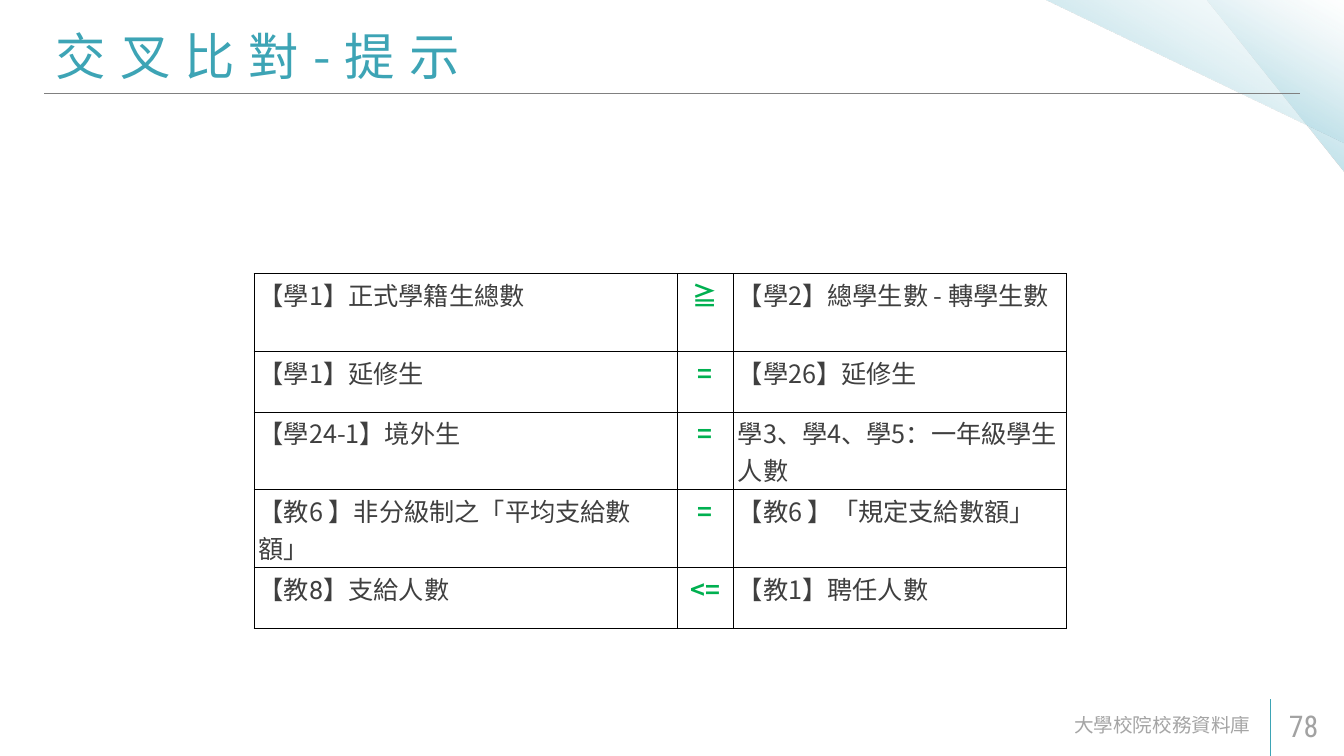
import pptx
import pptx.util
import pptx.dml.color
import pptx.oxml
import pptx.oxml.ns
import pptx.enum.shapes
import pptx.enum.text
from lxml import etree

PX = 9144  # 100 px to the inch
NS = 'xmlns:a="http://schemas.openxmlformats.org/drawingml/2006/main"'
SANS = "Noto Sans CJK SC"
TEAL, INK, GREEN = "3DA4B5", "3F3F3F", "00B050"
ALIGN = pptx.enum.text.PP_ALIGN


def rgb(code):
    return pptx.dml.color.RGBColor.from_string(code)


def write(frame, text, font, size, color, align=ALIGN.LEFT, bold=False, east=None):
    """Add one styled run to the first paragraph and return it."""
    frame.word_wrap = True
    para = frame.paragraphs[0]
    para.alignment = align
    run = para.add_run()
    run.text = text
    run.font.name = font
    run.font.size = pptx.util.Pt(size)
    run.font.bold = bold
    run.font.color.rgb = rgb(color)
    face = etree.SubElement(run.font._element, pptx.oxml.ns.qn("a:ea"))
    face.set("typeface", east or font)
    return run


deck = pptx.Presentation()
deck.slide_width, deck.slide_height = 2000 * PX, 1125 * PX
slide = deck.slides.add_slide(deck.slide_layouts[6])
shapes = slide.shapes

# Corner triangles
stops = [(0, "97D1E0", 100), (50, "AAD7E2", 44), (100, "E0F0F4", 0)]
marks = "".join(
    f'<a:gs pos="{pos * 1000}"><a:srgbClr val="{code}">'
    f'<a:alpha val="{alpha * 1000}"/></a:srgbClr></a:gs>'
    for pos, code, alpha in stops
)
fade = (f'<a:gradFill {NS} rotWithShape="1"><a:gsLst>{marks}</a:gsLst>'
        '<a:lin ang="7200000" scaled="0"/></a:gradFill>')
for box in [(1796, 0, 204, 257), (1554, 0, 448, 213)]:
    wedge = shapes.add_shape(
        pptx.enum.shapes.MSO_SHAPE.RIGHT_TRIANGLE, *[n * PX for n in box])
    wedge.rotation = 180
    wedge.shadow.inherit = False
    wedge.line.fill.background()
    wedge.fill.background()
    blank = wedge._element.spPr.find(pptx.oxml.ns.qn("a:noFill"))
    blank.getparent().replace(blank, pptx.oxml.parse_xml(fade))

# Rules under the title and beside the page number
for ends, color in [((66, 139, 1934, 139), "808080"),
                    ((1891, 1125, 1891, 1040), TEAL)]:
    rule = shapes.add_connector(
        pptx.enum.shapes.MSO_CONNECTOR.STRAIGHT, *[n * PX for n in ends])
    rule.line.color.rgb = rgb(color)
    rule.line.width = pptx.util.Pt(1)
    etree.SubElement(rule._element.spPr, pptx.oxml.ns.qn("a:effectLst"))

# Title, footer and page number
runs = []
for box, text, font, size, color, align in [
    ((65, 21, 1831, 123), "交叉比對-提示", SANS, 54, TEAL, ALIGN.LEFT),
    ((1029, 1049, 850, 60), "大學校院校務資料庫", "Roboto", 21, "808080", ALIGN.RIGHT),
    ((1900, 1049, 99, 60), "78", "Roboto Condensed", 32, "A2A2A2", ALIGN.LEFT),
]:
    frame = shapes.add_textbox(*[n * PX for n in box]).text_frame
    frame.vertical_anchor = pptx.enum.text.MSO_ANCHOR.MIDDLE
    frame.margin_left = frame.margin_right = 18 * PX
    frame.margin_top = frame.margin_bottom = 9 * PX
    runs.append(write(frame, text, font, size, color, align))
title, foot, page = runs
title.font._element.set("spc", "1500")
tint = foot.font._element.find(".//" + pptx.oxml.ns.qn("a:srgbClr"))
etree.SubElement(tint, pptx.oxml.ns.qn("a:alpha")).set("val", "70000")

# Table of checks; rows with wrapped text are taller
checks = [
    (116, "【學1】正式學籍生總數", "≧", "【學2】總學生數 - 轉學生數"),
    (90, "【學1】延修生", "=", "【學26】延修生"),
    (116, "【學24-1】境外生", "=", "學3、學4、學5：一年級學生人數"),
    (116, "【教6 】非分級制之「平均支給數額」", "=", "【教6 】「規定支給數額」"),
    (90, "【教8】支給人數", "<=", "【教1】聘任人數"),
]
widths = [630, 83, 496]
tall = sum(check[0] for check in checks)
table = shapes.add_table(
    len(checks), 3, 378 * PX, 407 * PX, sum(widths) * PX, tall * PX).table
table.first_row = table.horz_banding = False
for col, width in zip(table.columns, widths):
    col.width = width * PX
for row, (height, *texts) in zip(table.rows, checks):
    row.height = height * PX
    for spot, (cell, text) in enumerate(zip(row.cells, texts)):
        cell.margin_left = cell.margin_right = 7 * PX
        cell.margin_top = cell.margin_bottom = 4 * PX
        sign = spot == 1
        font = "Roboto" if text == "【教8】支給人數" else SANS
        write(cell.text_frame, text, font, 27, GREEN if sign else INK,
              ALIGN.CENTER if sign else ALIGN.LEFT, sign, SANS)
        cell.fill.background()
        props = cell._tc.get_or_add_tcPr()
        for place, side in enumerate(["lnL", "lnR", "lnT", "lnB"]):
            props.insert(place, pptx.oxml.parse_xml(
                f'<a:{side} {NS} w="12700"><a:solidFill>'
                f'<a:srgbClr val="000000"/></a:solidFill></a:{side}>'))

deck.save("out.pptx")
